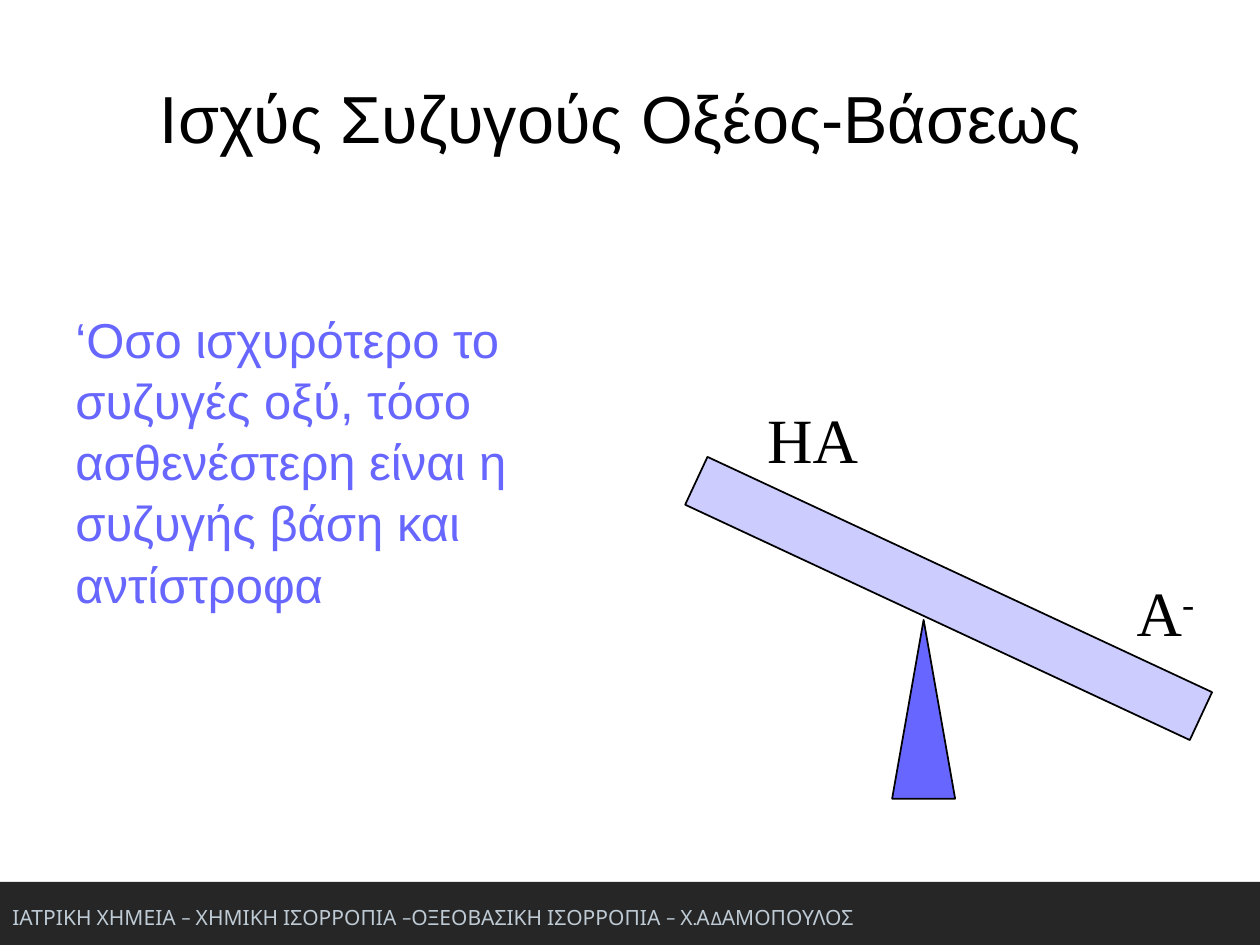
import pptx
import pptx.dml.color
import pptx.enum.shapes
import pptx.enum.text
import pptx.util

Pt = pptx.util.Pt
Shape = pptx.enum.shapes.MSO_SHAPE
Align = pptx.enum.text.PP_ALIGN
Anchor = pptx.enum.text.MSO_ANCHOR
AutoSize = pptx.enum.text.MSO_AUTO_SIZE

BLACK = pptx.dml.color.RGBColor(0x00, 0x00, 0x00)
CHARCOAL = pptx.dml.color.RGBColor(0x26, 0x26, 0x26)
MIST = pptx.dml.color.RGBColor(0xBE, 0xCA, 0xD4)
VIOLET = pptx.dml.color.RGBColor(0x67, 0x67, 0xFF)
LAVENDER = pptx.dml.color.RGBColor(0xCC, 0xCC, 0xFF)

PAGE_WIDTH, PAGE_HEIGHT = 720, 540


def style_paragraph(para, name, size, color, align=Align.LEFT):
    """Set the font and alignment of a whole paragraph."""
    para.alignment = align
    para.font.name = name
    para.font.size = Pt(size)
    para.font.color.rgb = color


def add_text(page, box, text, name, size, color, align=Align.LEFT, wrap=True):
    """Add a one-paragraph text box and return its paragraph."""
    frame = page.shapes.add_textbox(*map(Pt, box)).text_frame
    frame.word_wrap = wrap
    para = frame.paragraphs[0]
    para.add_run().text = text
    style_paragraph(para, name, size, color, align)
    return para


def add_solid(page, kind, box, fill, outline=None):
    """Add a filled preset shape, outlined if a colour is given."""
    shape = page.shapes.add_shape(kind, *map(Pt, box))
    shape.shadow.inherit = False
    shape.fill.solid()
    shape.fill.fore_color.rgb = fill
    if outline is None:
        shape.line.fill.background()
    else:
        shape.line.color.rgb = outline
        shape.line.width = Pt(1)
    return shape


def place_title(page, box):
    """Position the title placeholder and write the heading."""
    title = page.shapes.title
    title.left, title.top, title.width, title.height = map(Pt, box)
    frame = title.text_frame
    frame.text = "Ισχύς Συζυγούς Οξέος-Βάσεως "
    frame.auto_size = AutoSize.NONE
    frame.vertical_anchor = Anchor.MIDDLE
    style_paragraph(frame.paragraphs[0], "Arial", 38, BLACK, Align.CENTER)


def place_statement(page, box):
    """Write the rule about conjugate strength."""
    para = add_text(
        page, box,
        "‘Οσο ισχυρότερο το συζυγές οξύ, τόσο ασθενέστερη είναι η συζυγής βάση και αντίστροφα",
        "Arial", 28, VIOLET)
    para.space_before = Pt(7)
    para.line_spacing = 1.04


def place_seesaw(page, box):
    """Draw the tilted beam on its pivot with the acid and base labels."""
    left, top, width, height = box
    beam_box = (left, top + 101.5, width, 30.2)
    beam = add_solid(page, Shape.RECTANGLE, beam_box, LAVENDER, BLACK)
    beam.rotation = 25

    def add_label(label_box, text):
        """Add a centred species label."""
        return add_text(page, label_box, text, "Times New Roman", 36, BLACK,
                        Align.CENTER, wrap=False)

    add_label((left + 48.3, top, 66.2, 50.4), "HA")
    base = add_label((left + 258.5, top + 98.6, 49, 51), "A")
    charge = base.add_run()
    charge.text = "-"
    charge.font._element.set("baseline", "30000")
    pivot_height = 102.2
    pivot_box = (left + 126.8, top + height - pivot_height, 36, pivot_height)
    add_solid(page, Shape.ISOSCELES_TRIANGLE, pivot_box, VIOLET, BLACK)


def place_footer(page, box):
    """Draw the dark band with the course line."""
    left, top, width, height = box
    add_solid(page, Shape.RECTANGLE, box, CHARCOAL)
    add_text(page, (left, top + 9.4, 575.3, 21.6),
             "ΙΑΤΡΙΚΗ ΧΗΜΕΙΑ – ΧΗΜΙΚΗ ΙΣΟΡΡΟΠΙΑ –ΟΞΕΟΒΑΣΙΚΗ ΙΣΟΡΡΟΠΙΑ – Χ.ΑΔΑΜΟΠΟΥΛΟΣ",
             "Karla", 12, MIST)


def main():
    """Build and save the deck."""
    deck = pptx.Presentation()
    deck.slide_width, deck.slide_height = Pt(PAGE_WIDTH), Pt(PAGE_HEIGHT)
    page = deck.slides.add_slide(deck.slide_layouts.get_by_name("Title Only"))
    place_footer(page, (0, PAGE_HEIGHT - 36, PAGE_WIDTH, 36))
    place_title(page, (36, 21.6, 648, 90))
    place_statement(page, (36, 172, 317.5, 237.6))
    place_seesaw(page, (383, 225.4, 318.2, 231))
    deck.save("out.pptx")


if __name__ == "__main__":
    main()
